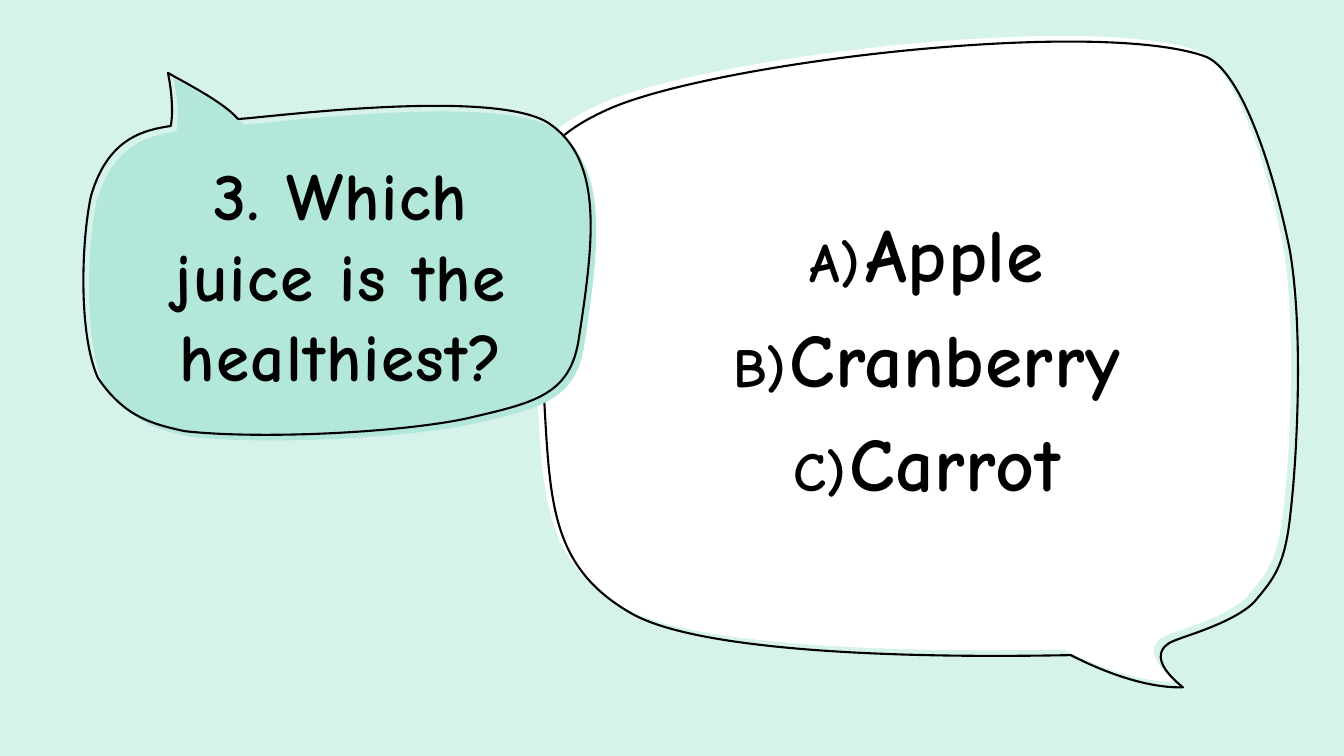
import pptx
import pptx.dml.color
import pptx.enum.shapes
import pptx.enum.text
import pptx.oxml
import pptx.oxml.ns
import pptx.util
from lxml import etree

Pt = pptx.util.Pt
qn = pptx.oxml.ns.qn
RGBColor = pptx.dml.color.RGBColor

MINT = RGBColor(0xD5, 0xF2, 0xEB)
TEAL = RGBColor(0xB2, 0xE7, 0xDA)
WHITE = RGBColor(0xFF, 0xFF, 0xFF)
BLACK = RGBColor(0, 0, 0)

WIDTH, HEIGHT = 960, 540

# Each bubble is a start point followed by three points per Bézier curve.
ANSWER_BUBBLE = [
    (833, 454),
    (842, 450), (876, 441), (891, 426),
    (904, 410), (913, 402), (917, 361),
    (922, 318), (926, 227), (916, 173),
    (905, 119), (882, 45), (855, 36),
    (776, 9), (510, 40), (432, 73),
    (353, 107), (374, 148), (381, 238),
    (389, 341), (380, 395), (444, 433),
    (506, 471), (743, 464), (760, 464),
    (807, 488), (834, 487), (840, 487),
    (809, 462), (833, 454), (833, 454),
]
QUESTION_BUBBLE = [
    (124, 56),
    (130, 60), (163, 76), (174, 89),
    (186, 89), (356, 66), (396, 92),
    (436, 119), (428, 178), (417, 249),
    (410, 287), (384, 292), (337, 303),
    (290, 313), (191, 318), (136, 312),
    (113, 307), (93, 302), (74, 274),
    (60, 243), (62, 177), (69, 144),
    (81, 103), (106, 97), (126, 94),
    (126, 94), (129, 81), (124, 56),
]


class QuizSlide:
    font_name = "Comic Neue"
    ink = BLACK
    outline_width = 1.5

    def __init__(self, slide, background):
        self.slide = slide
        self.shapes = slide.shapes
        slide.background.fill.solid()
        slide.background.fill.fore_color.rgb = background

    def paint(self, shape, fill):
        """Fill the shape, or draw only its outline when fill is None."""
        shape.shadow.inherit = False
        if fill is None:
            shape.fill.background()
            shape.line.color.rgb = self.ink
            shape.line.width = Pt(self.outline_width)
        else:
            shape.fill.solid()
            shape.fill.fore_color.rgb = fill
            shape.line.fill.background()

    def backdrop(self, fill):
        rectangle = pptx.enum.shapes.MSO_SHAPE.RECTANGLE
        self.paint(self.shapes.add_shape(rectangle, 0, 0, Pt(WIDTH), Pt(HEIGHT)), fill)

    def bubble(self, points, fill=None, shift=(0, 0)):
        start, *rest = [(x + shift[0], y + shift[1]) for x, y in points]
        builder = self.shapes.build_freeform(*start, scale=Pt(1))
        builder.add_line_segments(rest, close=True)
        shape = builder.convert_to_shape()
        self.bend(shape)
        self.paint(shape, fill)

    def bend(self, shape):
        """Turn every three straight segments into one cubic Bézier curve."""
        segments = list(shape.element.iter(qn("a:lnTo")))
        for first in range(0, len(segments), 3):
            curve = etree.Element(qn("a:cubicBezTo"))
            segments[first].addprevious(curve)
            for segment in segments[first:first + 3]:
                curve.append(segment[0])
                segment.getparent().remove(segment)

    def text(self, box, lines, size, spacing, space_before=0, lettered=False):
        frame = self.shapes.add_textbox(*map(Pt, box)).text_frame
        frame.word_wrap = True
        frame.vertical_anchor = pptx.enum.text.MSO_ANCHOR.MIDDLE
        frame.text = "\n".join(lines)
        for paragraph in frame.paragraphs:
            paragraph.alignment = pptx.enum.text.PP_ALIGN.CENTER
            paragraph.space_before = Pt(space_before)
            font = paragraph.font
            font.name, font.size, font.bold = self.font_name, Pt(size), True
            font.color.rgb = self.ink
            properties = paragraph._p.get_or_add_pPr()
            defaults = properties.find(qn("a:defRPr"))
            defaults.set("spc", str(round(spacing * 100)))
            if lettered:
                self.letter(properties, defaults)

    def letter(self, properties, defaults, indent=40):
        """Number the paragraph A), B), C) with a hanging indent."""
        properties.set("marL", str(Pt(indent)))
        properties.set("indent", str(Pt(-indent)))
        for tag, name, value in (
            ("a:buSzPct", "val", "73000"),
            ("a:buFont", "typeface", self.font_name),
            ("a:buAutoNum", "type", "alphaUcParenR"),
        ):
            bullet = etree.Element(qn(tag))
            bullet.set(name, value)
            defaults.addprevious(bullet)


def main():
    deck = pptx.Presentation()
    deck.slide_width, deck.slide_height = Pt(WIDTH), Pt(HEIGHT)
    quiz = QuizSlide(deck.slides.add_slide(deck.slide_layouts[6]), MINT)

    quiz.backdrop(MINT)
    quiz.bubble(ANSWER_BUBBLE, fill=WHITE)
    quiz.bubble(ANSWER_BUBBLE, shift=(5, 4))
    quiz.bubble(QUESTION_BUBBLE, fill=TEAL)
    quiz.text((96.5, 114, 294.5, 164), ["3. Which juice is the healthiest?"],
              size=48, spacing=1)
    quiz.bubble(QUESTION_BUBBLE, shift=(-4, -4))
    quiz.text((461, 89, 402, 332), ["Apple", "Cranberry", "Carrot"],
              size=54, spacing=0.5, space_before=10, lettered=True)

    deck.save("out.pptx")


if __name__ == "__main__":
    main()
